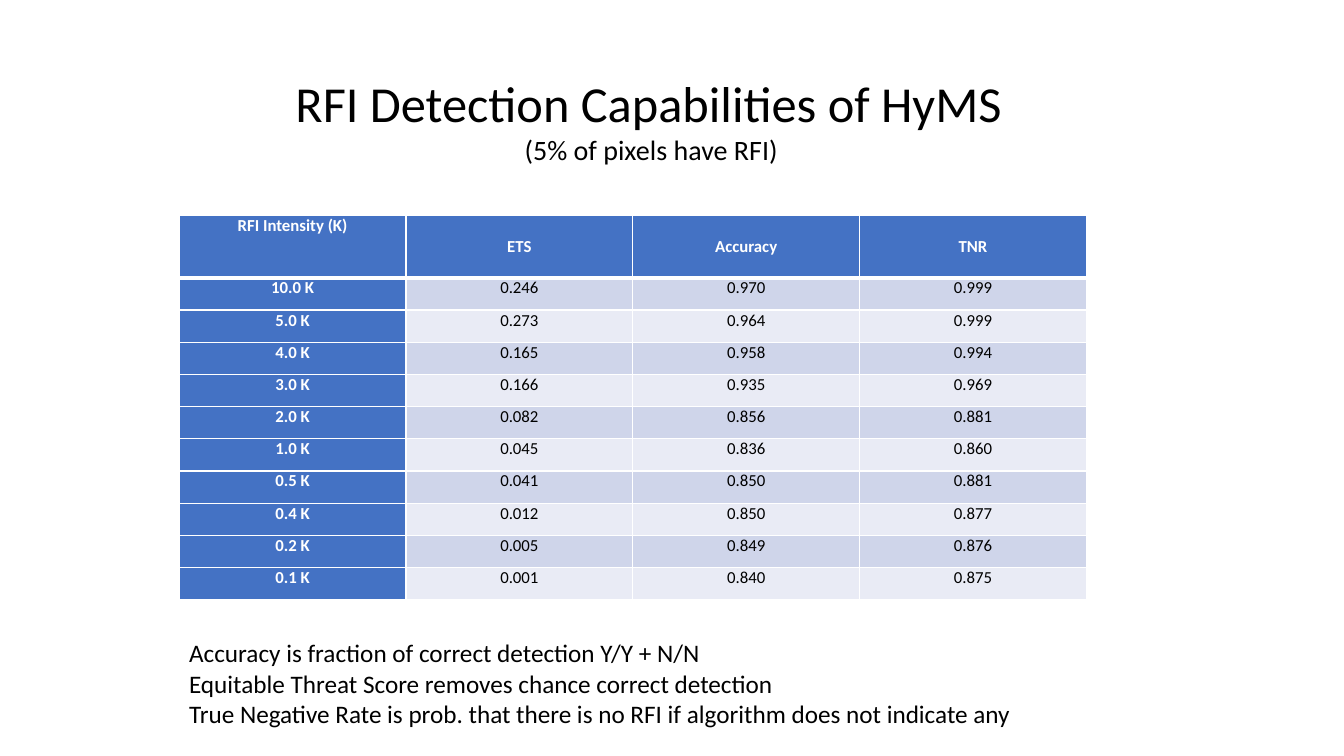
import pptx
import pptx.dml.color
import pptx.enum.text
import pptx.oxml
import pptx.oxml.ns
import pptx.util

Pt = pptx.util.Pt
RGBColor = pptx.dml.color.RGBColor
Align = pptx.enum.text.PP_ALIGN
Anchor = pptx.enum.text.MSO_ANCHOR
AutoSize = pptx.enum.text.MSO_AUTO_SIZE

WHITE = RGBColor(0xFF, 0xFF, 0xFF)
BLACK = RGBColor(0x00, 0x00, 0x00)
BLUE = RGBColor(0x44, 0x72, 0xC4)
BAND_DARK = RGBColor(0xCF, 0xD5, 0xEA)
BAND_LIGHT = RGBColor(0xE9, 0xEB, 0xF5)

FONT_NAME = "Calibri"
COLUMN_WIDTH = 162
HEADER_HEIGHT = 44.5
ROW_HEIGHT = 23

HEADERS = ("RFI Intensity (K)", "ETS", "Accuracy", "TNR")
SCORES = (
    ("10.0 K", "0.246", "0.970", "0.999"),
    ("5.0 K", "0.273", "0.964", "0.999"),
    ("4.0 K", "0.165", "0.958", "0.994"),
    ("3.0 K", "0.166", "0.935", "0.969"),
    ("2.0 K", "0.082", "0.856", "0.881"),
    ("1.0 K", "0.045", "0.836", "0.860"),
    ("0.5 K", "0.041", "0.850", "0.881"),
    ("0.4 K", "0.012", "0.850", "0.877"),
    ("0.2 K", "0.005", "0.849", "0.876"),
    ("0.1 K", "0.001", "0.840", "0.875"),
)
TITLE = (
    ("RFI Detection Capabilities of HyMS ", 36),
    ("(5% of pixels have RFI) ", 20),
)
DEFINITIONS = (
    ("Accuracy is fraction of correct detection Y/Y + N/N", 18),
    ("Equitable Threat Score removes chance correct detection", 18),
    ("True Negative Rate is prob. that there is no RFI if algorithm does not indicate any", 18),
)


def apply_format(target, values):
    for name, value in values.items():
        setattr(target, name, value)


def write_text(paragraph, text, size, color, bold, alignment):
    paragraph.alignment = alignment
    run = paragraph.add_run()
    run.text = text
    apply_format(run.font, {"name": FONT_NAME, "size": Pt(size), "bold": bold})
    run.font.color.rgb = color


def add_text(slide, left, top, width, height, lines, alignment):
    shape = slide.shapes.add_textbox(Pt(left), Pt(top), Pt(width), Pt(height))
    frame = shape.text_frame
    apply_format(frame, {"word_wrap": False, "auto_size": AutoSize.SHAPE_TO_FIT_TEXT})
    for index, (text, size) in enumerate(lines):
        paragraph = frame.add_paragraph() if index else frame.paragraphs[0]
        write_text(paragraph, text, size, BLACK, False, alignment)


def add_border(cell, side, width):
    namespace = pptx.oxml.ns.nsdecls("a")
    cell._tc.get_or_add_tcPr().append(pptx.oxml.parse_xml(
        f'<a:ln{side} {namespace} w="{Pt(width)}"><a:solidFill>'
        f'<a:srgbClr val="{WHITE}"/></a:solidFill></a:ln{side}>'
    ))


def fill_cell(cell, text, row, column):
    is_heading = row == 0 or column == 0
    band = BAND_DARK if row % 2 else BAND_LIGHT
    apply_format(cell, {
        "margin_left": Pt(5),
        "margin_right": Pt(5),
        "margin_top": Pt(0),
        "margin_bottom": Pt(0),
        "vertical_anchor": Anchor.MIDDLE if row == 0 and column else Anchor.TOP,
    })
    for side in "LRTB":
        under_header = (row, side) in ((0, "B"), (1, "T"))
        add_border(cell, side, 3 if under_header else 1)
    cell.fill.solid()
    cell.fill.fore_color.rgb = BLUE if is_heading else band
    color = WHITE if is_heading else BLACK
    write_text(cell.text_frame.paragraphs[0], text, 12, color, is_heading, Align.CENTER)


def add_score_table(slide, left, top):
    rows = (HEADERS, *SCORES)
    width = COLUMN_WIDTH * len(HEADERS)
    height = HEADER_HEIGHT + ROW_HEIGHT * len(SCORES)
    table = slide.shapes.add_table(
        len(rows), len(HEADERS), Pt(left), Pt(top), Pt(width), Pt(height)
    ).table
    table.first_col = True
    for column in table.columns:
        column.width = Pt(COLUMN_WIDTH)
    for row_index, texts in enumerate(rows):
        table.rows[row_index].height = Pt(ROW_HEIGHT if row_index else HEADER_HEIGHT)
        for column_index, text in enumerate(texts):
            fill_cell(table.cell(row_index, column_index), text, row_index, column_index)


def main():
    presentation = pptx.Presentation()
    apply_format(presentation, {"slide_width": Pt(960), "slide_height": Pt(540)})
    slide = presentation.slides.add_slide(presentation.slide_layouts[6])
    add_score_table(slide, 128, 154)
    add_text(slide, 201.5, 48, 532, 75, TITLE, Align.CENTER)
    add_text(slide, 128, 452, 617, 72.7, DEFINITIONS, Align.LEFT)
    presentation.save("out.pptx")


if __name__ == "__main__":
    main()
